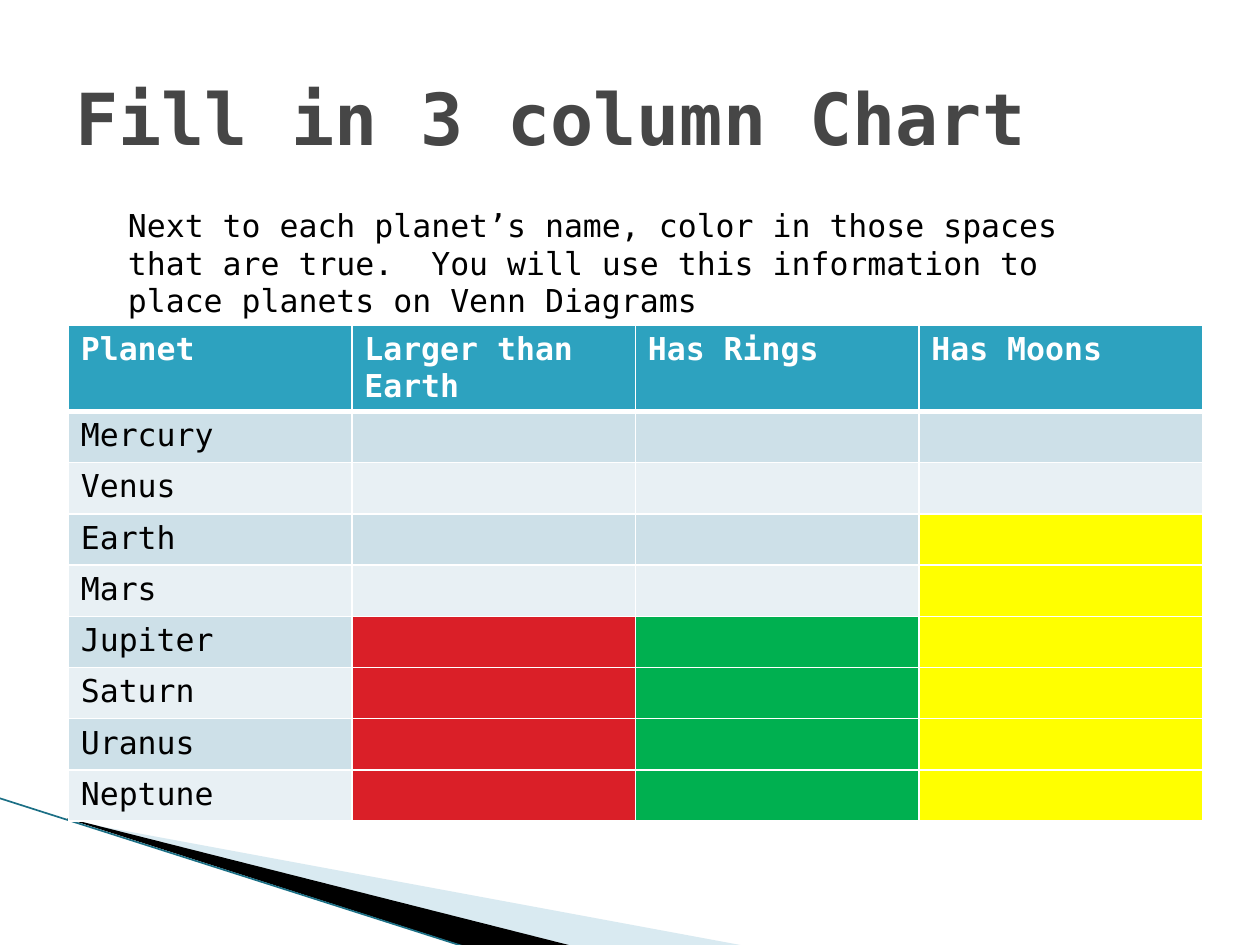
from lxml import etree
from pptx import Presentation
from pptx.dml.color import RGBColor
from pptx.enum import shapes, text
from pptx.oxml import ns
from pptx.util import Pt

FONT = "DejaVu Sans Mono"
WHITE = RGBColor(0xFF, 0xFF, 0xFF)
BLACK = RGBColor(0, 0, 0)
GREY = RGBColor(0x46, 0x46, 0x46)
TEAL = RGBColor(0x2D, 0xA2, 0xBF)
DEEP = RGBColor(0x1B, 0x6F, 0x85)
SKY = RGBColor(0xA0, 0xCB, 0xDC)
BANDS = RGBColor(0xCD, 0xE0, 0xE8), RGBColor(0xE8, 0xF0, 0xF4)
RED = RGBColor(0xDA, 0x1F, 0x28)
GREEN = RGBColor(0, 0xB0, 0x50)
YELLOW = RGBColor(0xFF, 0xFF, 0)

HEADS = "Planet", "Larger than Earth", "Has Rings", "Has Moons"
MARKS = RED, GREEN, YELLOW
# Planet name, then larger than Earth, has rings, has moons
PLANETS = [
    ("Mercury", 0, 0, 0),
    ("Venus", 0, 0, 0),
    ("Earth", 0, 0, 1),
    ("Mars", 0, 0, 1),
    ("Jupiter", 1, 1, 1),
    ("Saturn", 1, 1, 1),
    ("Uranus", 1, 1, 1),
    ("Neptune", 1, 1, 1),
]


def set_font(para, size, color, bold=False):
    font = para.font
    font.name, font.size, font.bold = FONT, Pt(size), bold
    font.color.rgb = color


def add_text(slide, box, words, size, color, bold=False,
             anchor=text.MSO_ANCHOR.TOP):
    frame = slide.shapes.add_textbox(*map(Pt, box)).text_frame
    frame.word_wrap = True
    frame.vertical_anchor = anchor
    para = frame.paragraphs[0]
    para.text = words
    set_font(para, size, color, bold)


def add_wedge(slide, left, top, points, color, alpha=None):
    spots = [(Pt(left + x), Pt(top + y)) for x, y in points]
    build = slide.shapes.build_freeform(*spots[0])
    build.add_line_segments(spots[1:])
    wedge = build.convert_to_shape()
    wedge.shadow.inherit = False
    wedge.line.fill.background()
    wedge.fill.solid()
    wedge.fill.fore_color.rgb = color
    if alpha:
        tint = wedge.fill._xPr.find(".//" + ns.qn("a:srgbClr"))
        etree.SubElement(tint, ns.qn("a:alpha"), val=str(alpha * 1000))


def add_corner(slide, left, top):
    """Slanted wedges and edge line in the bottom left corner."""
    add_wedge(slide, left + 40, top + 12.5,
              [(0, 0.5), (388.5, 72.5), (288.5, 72.5), (0, 0)], SKY, 40)
    add_wedge(slide, left + 38.5, top + 11.5,
              [(0, 0), (290.5, 73.5), (229.5, 74), (0.5, 0.5)], BLACK)
    edge = slide.shapes.add_connector(
        shapes.MSO_CONNECTOR.STRAIGHT, Pt(left - 0.7), Pt(top),
        Pt(left + 267), Pt(top + 85.5))
    edge.line.color.rgb = DEEP
    edge.line.width = Pt(0.95)
    etree.SubElement(edge._element.spPr, ns.qn("a:effectLst"))


def add_borders(cell, bottom, top):
    props = cell._tc.get_or_add_tcPr()
    sides = ("L", 1), ("R", 1), ("T", top), ("B", bottom)
    for spot, (side, width) in enumerate(sides):
        line = etree.Element(ns.qn("a:ln" + side), w=str(Pt(width)))
        fill = etree.SubElement(line, ns.qn("a:solidFill"))
        etree.SubElement(fill, ns.qn("a:srgbClr"), val=str(WHITE))
        props.insert(spot, line)


def fill_cell(cell, words, fill, color, bold=False, bottom=1, top=1):
    cell.fill.solid()
    cell.fill.fore_color.rgb = fill
    para = cell.text_frame.paragraphs[0]
    para.text = words
    set_font(para, 18, color, bold)
    add_borders(cell, bottom, top)


def add_grid(slide, left, top, width, head, row):
    count = len(PLANETS)
    table = slide.shapes.add_table(
        count + 1, len(HEADS), Pt(left), Pt(top), Pt(width),
        Pt(head + count * row)).table
    for i, line in enumerate(table.rows):
        line.height = Pt(row if i else head)
    # Header row
    for j, words in enumerate(HEADS):
        fill_cell(table.cell(0, j), words, TEAL, WHITE, True, bottom=3)
    # Planet rows: a mark where the heading is true, else the band
    for i, (name, *facts) in enumerate(PLANETS, 1):
        band = BANDS[(i - 1) % 2]
        top_line = 3 if i == 1 else 1
        fill_cell(table.cell(i, 0), name, band, BLACK, top=top_line)
        for j, (fact, mark) in enumerate(zip(facts, MARKS), 1):
            fill_cell(table.cell(i, j), "", mark if fact else band, BLACK,
                      top=top_line)


def main():
    deck = Presentation()
    deck.slide_width, deck.slide_height = Pt(720), Pt(540)
    slide = deck.slides.add_slide(deck.slide_layouts[6])
    add_corner(slide, 0, 456)
    add_grid(slide, 39, 186, 648, 49, 29.3)
    # Title and instructions
    add_text(slide, (36, 21.6, 648, 90), "Fill in 3 column Chart", 41, GREY,
             True, text.MSO_ANCHOR.MIDDLE)
    add_text(slide, (66, 114, 594, 51),
             "Next to each planet’s name, color in those spaces that are "
             "true.  You will use this information to place planets on "
             "Venn Diagrams", 18, BLACK)
    deck.save("out.pptx")


if __name__ == "__main__":
    main()
